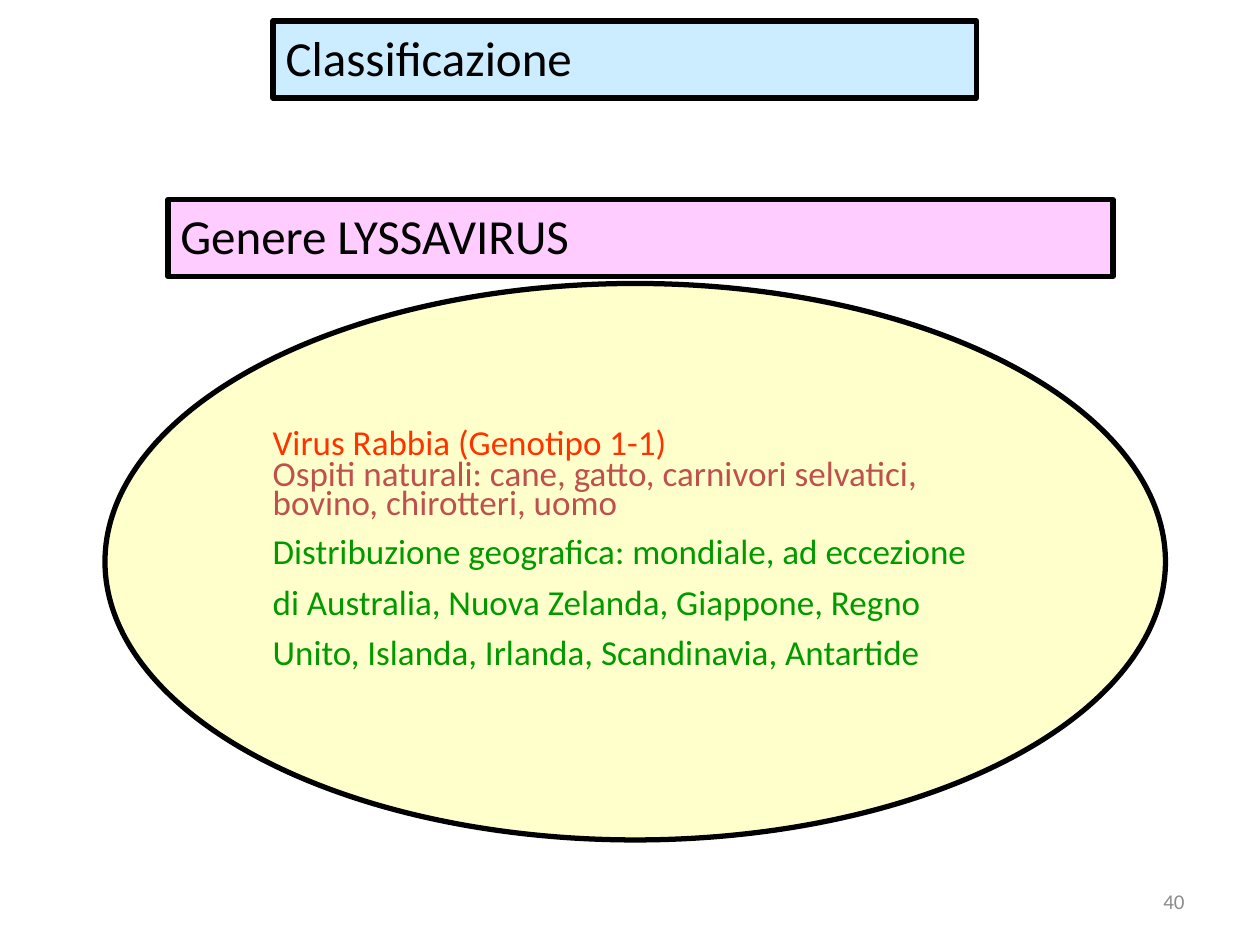
from pptx import Presentation
from pptx.dml.color import RGBColor
from pptx.enum.shapes import MSO_SHAPE
from pptx.enum.text import MSO_ANCHOR, MSO_AUTO_SIZE, PP_ALIGN
from pptx.util import Pt

FONT = "Calibri"
BLACK = "000000"


def color(hex_code):
    return RGBColor.from_string(hex_code)


def place(shape, left, top, width, height):
    shape.left, shape.top = Pt(left), Pt(top)
    shape.width, shape.height = Pt(width), Pt(height)


def paint(shape, fill):
    shape.fill.solid()
    shape.fill.fore_color.rgb = color(fill)
    shape.line.color.rgb = color(BLACK)
    shape.line.width = Pt(3)


def write(paragraph, text, size, text_color, align=PP_ALIGN.LEFT, spacing=1.0):
    paragraph.text = text
    paragraph.alignment = align
    paragraph.line_spacing = spacing
    paragraph.font.name = FONT
    paragraph.font.size = Pt(size)
    paragraph.font.color.rgb = color(text_color)


def fill_banner(banner, text, fill):
    paint(banner, fill)
    frame = banner.text_frame
    frame.word_wrap = True
    frame.auto_size = MSO_AUTO_SIZE.NONE
    frame.vertical_anchor = MSO_ANCHOR.TOP
    write(frame.paragraphs[0], text, 28, BLACK)


def add_oval(slide, box, fill, facts):
    oval = slide.shapes.add_shape(MSO_SHAPE.OVAL, *map(Pt, box))
    oval.shadow.inherit = False
    paint(oval, fill)
    frame = oval.text_frame
    frame.word_wrap = True
    frame.vertical_anchor = MSO_ANCHOR.MIDDLE
    frame.margin_bottom = Pt(25.6)  # lifts the text above the centre
    for index, (text, text_color, spacing) in enumerate(facts):
        paragraph = frame.add_paragraph() if index else frame.paragraphs[0]
        write(paragraph, text, 20, text_color, spacing=spacing)


def add_page_number(slide, number):
    page = slide.shapes.add_textbox(Pt(516), Pt(500.5), Pt(168), Pt(28.75))
    frame = page.text_frame
    frame.word_wrap = True
    frame.vertical_anchor = MSO_ANCHOR.MIDDLE
    write(frame.paragraphs[0], number, 12, "8C8C8C", align=PP_ALIGN.RIGHT)


def main():
    deck = Presentation()
    deck.slide_width, deck.slide_height = Pt(720), Pt(540)
    slide = deck.slides.add_slide(deck.slide_layouts[5])

    # Title
    title = slide.shapes.title
    place(title, 156, 12, 402, 44)
    fill_banner(title, "Classificazione", "CCECFF")

    # Genus heading
    genus = slide.shapes.add_shape(MSO_SHAPE.RECTANGLE, Pt(96), Pt(114), Pt(540), Pt(44))
    genus.shadow.inherit = False
    fill_banner(genus, "Genere LYSSAVIRUS", "FFCCFF")

    # Virus, hosts and distribution
    add_oval(slide, (60, 162, 606, 318), "FFFFCC", [
        ("Virus Rabbia (Genotipo 1-1)", "FF3300", 1.2),
        ("Ospiti naturali: cane, gatto, carnivori selvatici, "
         "bovino, chirotteri, uomo", "C0504D", 0.7),
        ("Distribuzione geografica: mondiale, ad eccezione di Australia, "
         "Nuova Zelanda, Giappone, Regno Unito, Islanda, Irlanda, "
         "Scandinavia, Antartide", "009900", 1.2),
    ])

    add_page_number(slide, "40")
    deck.save("out.pptx")


if __name__ == "__main__":
    main()
